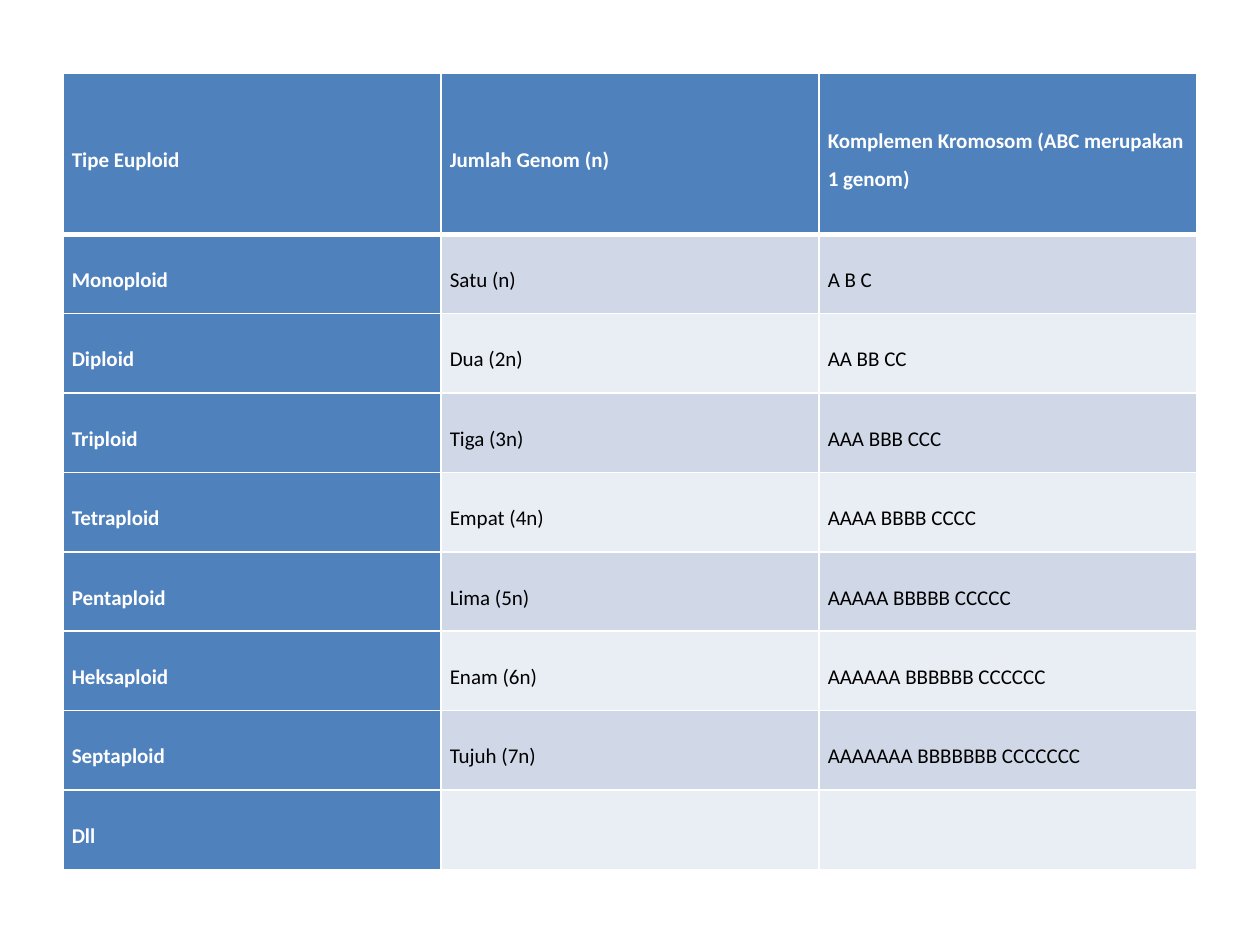
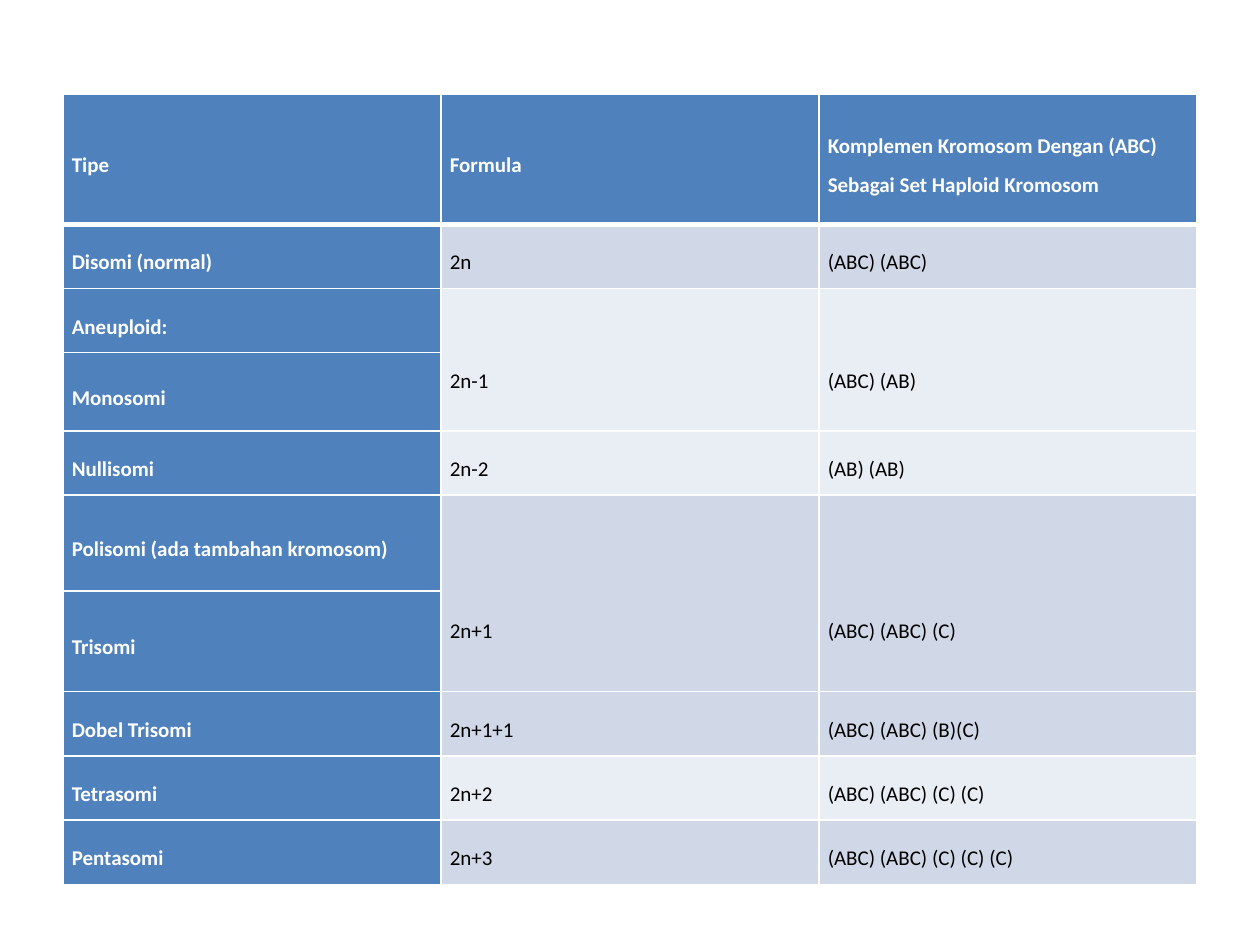
from dataclasses import dataclass
from typing import NamedTuple

from lxml.etree import SubElement
from pptx import Presentation
from pptx.dml.color import RGBColor
from pptx.enum.text import MSO_ANCHOR
from pptx.oxml.ns import qn
from pptx.util import Inches, Pt


@dataclass(frozen=True)
class Theme:
    font: str = "Calibri"
    size: int = 12
    spacing: float = 1.5
    head: str = "4F81BD"
    odd: str = "D0D8E8"
    even: str = "E9EDF4"
    light: str = "FFFFFF"
    dark: str = "000000"
    thin: int = 1
    thick: int = 3
    side: float = 0.07
    edge: float = 0.01


class Row(NamedTuple):
    """One table row; span joins the value cells downward, drop lowers their text."""
    label: str
    count: str = ""
    genes: str = ""
    height: float = 0.0
    span: int = 1
    drop: float = 0.0


class Grid(NamedTuple):
    top: float
    height: float
    rows: list[Row]


THEME = Theme()
LEFT, WIDTH, COLS = 0.5, 9, 3

EUPLOID = Grid(0.58, 0.63, [
    Row("Tipe Euploid", "Jumlah Genom (n)",
        "Komplemen Kromosom (ABC merupakan 1 genom)", height=1.28),
    Row("Monoploid", "Satu (n)", "A B C"),
    Row("Diploid", "Dua (2n)", "AA BB CC"),
    Row("Triploid", "Tiga (3n)", "AAA BBB CCC"),
    Row("Tetraploid", "Empat (4n)", "AAAA BBBB CCCC"),
    Row("Pentaploid", "Lima (5n)", "AAAAA BBBBB CCCCC"),
    Row("Heksaploid", "Enam (6n)", "AAAAAA BBBBBB CCCCCC"),
    Row("Septaploid", "Tujuh (7n)", "AAAAAAA BBBBBBB CCCCCCC"),
    Row("Dll"),
])

ANEUPLOID = Grid(0.75, 0.51, [
    Row("Tipe", "Formula",
        "Komplemen Kromosom Dengan (ABC) Sebagai Set Haploid Kromosom", height=1.03),
    Row("Disomi (normal)", "2n", "(ABC) (ABC)"),
    Row("Aneuploid:", "2n-1", "(ABC) (AB)", span=2, drop=0.25),
    Row("Monosomi", height=0.62),
    Row("Nullisomi", "2n-2", "(AB) (AB)"),
    Row("Polisomi (ada tambahan kromosom)", "2n+1", "(ABC) (ABC) (C)",
        height=0.76, span=2, drop=0.5),
    Row("Trisomi", height=0.8),
    Row("Dobel Trisomi", "2n+1+1", "(ABC) (ABC) (B)(C)"),
    Row("Tetrasomi", "2n+2", "(ABC) (ABC) (C) (C)"),
    Row("Pentasomi", "2n+3", "(ABC) (ABC) (C) (C) (C)"),
])


def set_edges(cell, top: int, bottom: int) -> None:
    props = cell._tc.get_or_add_tcPr()
    widths = {"lnL": THEME.thin, "lnR": THEME.thin, "lnT": top, "lnB": bottom}
    for name, width in widths.items():
        line = SubElement(props, qn(f"a:{name}"), w=str(Pt(width)))
        fill = SubElement(line, qn("a:solidFill"))
        SubElement(fill, qn("a:srgbClr"), val=THEME.light)


def style_cell(cell, text: str, row: int, is_head: bool, drop: float) -> None:
    set_edges(cell,
              THEME.thick if row == 1 else THEME.thin,
              THEME.thick if row == 0 else THEME.thin)
    band = THEME.odd if row % 2 else THEME.even
    cell.fill.solid()
    cell.fill.fore_color.rgb = RGBColor.from_string(THEME.head if is_head else band)
    cell.margin_left = cell.margin_right = Inches(THEME.side)
    cell.margin_top = Inches(THEME.edge + drop)
    cell.margin_bottom = Inches(THEME.edge)
    cell.vertical_anchor = MSO_ANCHOR.MIDDLE
    cell.text = text
    para = cell.text_frame.paragraphs[0]
    para.line_spacing = THEME.spacing
    font = para.font
    font.name, font.size, font.bold = THEME.font, Pt(THEME.size), is_head
    font.color.rgb = RGBColor.from_string(THEME.light if is_head else THEME.dark)


def draw_grid(slide, grid: Grid) -> None:
    heights = [row.height or grid.height for row in grid.rows]
    table = slide.shapes.add_table(
        len(grid.rows), COLS, Inches(LEFT), Inches(grid.top),
        Inches(WIDTH), Inches(sum(heights))).table
    table.horz_banding = table.first_row = False
    for at, (row, height) in enumerate(zip(grid.rows, heights)):
        table.rows[at].height = Inches(height)
        for col, text in enumerate((row.label, row.count, row.genes)):
            cell = table.cell(at, col)
            if cell.is_spanned:
                continue
            if col and row.span > 1:
                cell.merge(table.cell(at + row.span - 1, col))
            style_cell(cell, text, at, at == 0 or col == 0, row.drop if col else 0)


def main() -> None:
    deck = Presentation()
    deck.slide_width, deck.slide_height = Inches(10), Inches(7.5)
    for grid in (EUPLOID, ANEUPLOID):
        draw_grid(deck.slides.add_slide(deck.slide_layouts[6]), grid)
    deck.save("out.pptx")


if __name__ == "__main__":
    main()
